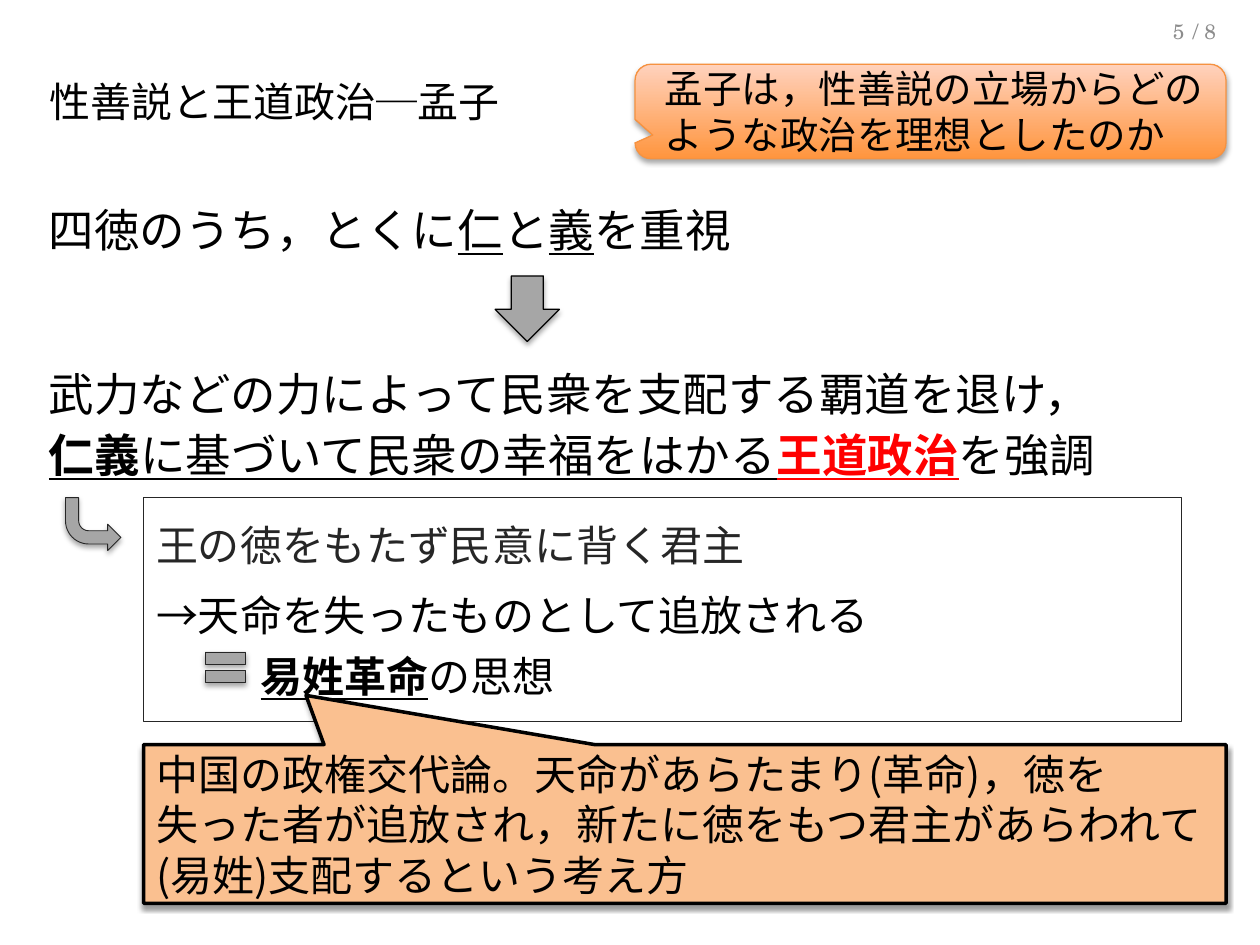
from dataclasses import dataclass
from typing import Optional

from lxml import etree
from pptx import Presentation
from pptx.dml.color import RGBColor as Rgb
from pptx.enum.shapes import MSO_SHAPE as Form
from pptx.enum.text import MSO_ANCHOR as Anchor, MSO_AUTO_SIZE as Fit, PP_ALIGN as Align
from pptx.oxml.ns import qn
from pptx.util import Inches, Pt


@dataclass(frozen=True)
class Theme:
    sans: str = "Noto Sans CJK JP"
    serif: str = "TeX Gyre Schola"
    black: str = "000000"
    dark: str = "262626"
    red: str = "FF0000"
    pale: str = "8C8C8C"
    gray: str = "A6A6A6"
    white: str = "FFFFFF"
    peach: str = "FAC090"
    edge: str = "F69240"
    glow: tuple = ("FF953E", "FFD2BD")
    head: float = 23.4
    ask: float = 22
    main: float = 26
    note: float = 24
    page: float = 12


T = Theme()


@dataclass(frozen=True)
class Run:
    text: str
    bold: bool = False
    line: bool = False
    color: Optional[str] = None


@dataclass(frozen=True)
class Text:
    paras: tuple  # each paragraph is a tuple of runs
    size: float
    color: str = T.black
    face: str = T.sans
    align: Align = Align.LEFT
    anchor: Anchor = Anchor.TOP
    lead: Optional[float] = None
    left: float = 0.1
    top: float = 0.05


@dataclass(frozen=True)
class Block:
    box: tuple
    text: Optional[Text] = None
    form: Optional[Form] = None  # no form means a plain text box
    fill: object = None
    edge: str = T.black
    width: float = 0.75
    adj: tuple = ()
    shade: int = 0  # shadow strength in percent
    flip: bool = False


def write(shape, text: Text) -> None:
    frame = shape.text_frame
    frame.word_wrap = True
    frame.auto_size = Fit.NONE
    frame.vertical_anchor = text.anchor
    frame.margin_left, frame.margin_top = Inches(text.left), Inches(text.top)
    frame.margin_right, frame.margin_bottom = Inches(0.1), Inches(0.05)
    for i, runs in enumerate(text.paras):
        para = frame.add_paragraph() if i else frame.paragraphs[0]
        para.alignment = text.align
        para.space_before = Pt(5 if i and text.lead else 0)
        if text.lead:
            para.line_spacing = Pt(text.lead)
        font = para.font
        font.size, font.name = Pt(text.size), text.face
        font.color.rgb = Rgb.from_string(text.color)
        # East Asian face
        base = para._p.pPr.find(qn("a:defRPr"))
        etree.SubElement(base, qn("a:ea")).set("typeface", text.face)
        for part in runs:
            run = para.add_run()
            run.text = part.text
            if part.bold:
                run.font.bold = True
            if part.line:
                run.font.underline = True
            if part.color:
                run.font.color.rgb = Rgb.from_string(part.color)


def cast(shape, alpha: int) -> None:
    """Give the shape a soft shadow that falls straight down."""
    root = shape._element.spPr.find(qn("a:effectLst"))
    outer = etree.SubElement(root, qn("a:outerShdw"), blurRad=str(Pt(3.1)),
                             dist=str(Pt(1.8)), dir="5400000", rotWithShape="0")
    tint = etree.SubElement(outer, qn("a:srgbClr"), val=T.black)
    etree.SubElement(tint, qn("a:alpha"), val=str(alpha * 1000))


def paint(shape, fill) -> None:
    if isinstance(fill, tuple):
        shape.fill.gradient()
        shape.fill.gradient_angle = 90
        for i, (stop, color) in enumerate(zip(shape.fill.gradient_stops, fill)):
            stop.position = i
            stop.color.rgb = Rgb.from_string(color)
    else:
        shape.fill.solid()
        shape.fill.fore_color.rgb = Rgb.from_string(fill)


def draw(slide, block: Block) -> None:
    spot = [Inches(n) for n in block.box]
    if block.form is None:
        shape = slide.shapes.add_textbox(*spot)
    else:
        shape = slide.shapes.add_shape(block.form, *spot)
        for i, value in enumerate(block.adj):
            shape.adjustments[i] = value
        paint(shape, block.fill)
        shape.line.color.rgb = Rgb.from_string(block.edge)
        shape.line.width = Pt(block.width)
        shape.shadow.inherit = False
        if block.shade:
            cast(shape, block.shade)
        if block.flip:
            shape._element.spPr.find(qn("a:xfrm")).set("flipV", "1")
    if block.text:
        write(shape, block.text)


def page(text: str, left: float) -> Block:
    return Block((left, 0.11, 2.33, 0.27),
                 Text(((Run(text),),), T.page, T.pale, T.serif, Align.RIGHT, Anchor.MIDDLE))


def body(box: tuple, size: float, *paras: tuple) -> Block:
    return Block(box, Text(paras, size, lead=30))


BLOCKS = (
    # Page count
    page("/ 8", 7.42),
    page("5", 7.17),
    # Key question
    Block((5.04, 0.51, 4.69, 0.75),
          Text(((Run("孟子は，性善説の立場からどのような政治を理想としたのか"),),),
               T.ask, anchor=Anchor.MIDDLE, left=0.2),
          Form.ROUNDED_RECTANGULAR_CALLOUT, T.glow, T.edge,
          adj=(-0.47, 0.25, 0.17), shade=35),
    # From the virtues to the royal way
    body((0.29, 1.57, 9.44, 0.63), T.main,
         (Run("四徳のうち，とくに"), Run("仁", line=True), Run("と"),
          Run("義", line=True), Run("を重視"))),
    Block((3.93, 2.19, 0.51, 0.52), form=Form.DOWN_ARROW, fill=T.gray, shade=35),
    body((0.29, 2.87, 9.44, 1.02), T.main,
         (Run("武力などの力によって民衆を支配する覇道を退け，"),),
         (Run("仁義", True, True), Run("に基づいて民衆の幸福をはかる", line=True),
          Run("王道政治", True, True, T.red), Run("を強調"))),
    # Loss of the mandate
    Block((0.52, 3.95, 0.44, 0.42), form=Form.BENT_ARROW, fill=T.gray,
          edge=T.dark, width=0.5, shade=35, flip=True),
    Block((1.14, 3.95, 8.24, 1.78),
          Text(((Run("王の徳をもたず民意に背く君主"),),), T.note, T.dark, lead=30, top=0.16),
          Form.RECTANGLE, T.white, T.dark, 0.5),
    body((1.14, 4.61, 8.24, 0.49), T.note, (Run("→天命を失ったものとして追放される"),)),
    Block((1.57, 5.09, 0.44, 0.41), form=Form.MATH_EQUAL, fill=T.gray,
          edge=T.dark, width=0.5, shade=35),
    body((1.97, 5.1, 2.97, 0.63), T.note, (Run("易姓革命", True, True), Run("の思想"))),
    # Meaning of the term
    Block((1.14, 5.91, 8.59, 1.26),
          Text(((Run("中国の政権交代論。天命があらたまり(革命)，徳を"),),
                (Run("失った者が追放され，新たに徳をもつ君主があらわれて(易姓)支配するという考え方"),)),
               T.note, anchor=Anchor.MIDDLE),
          Form.RECTANGULAR_CALLOUT, T.peach, width=2, adj=(-0.35, -0.81), shade=38),
)


def main() -> None:
    deck = Presentation()
    deck.slide_width, deck.slide_height = Inches(10), Inches(7.5)
    slide = deck.slides.add_slide(deck.slide_layouts[5])
    # Title
    title = slide.shapes.title
    title.left, title.top = Inches(0.29), Inches(0.51)
    title.width, title.height = Inches(3.79), Inches(0.59)
    write(title, Text(((Run("性善説と王道政治─孟子"),),), T.head, anchor=Anchor.MIDDLE))
    for block in BLOCKS:
        draw(slide, block)
    deck.save("out.pptx")


if __name__ == "__main__":
    main()
